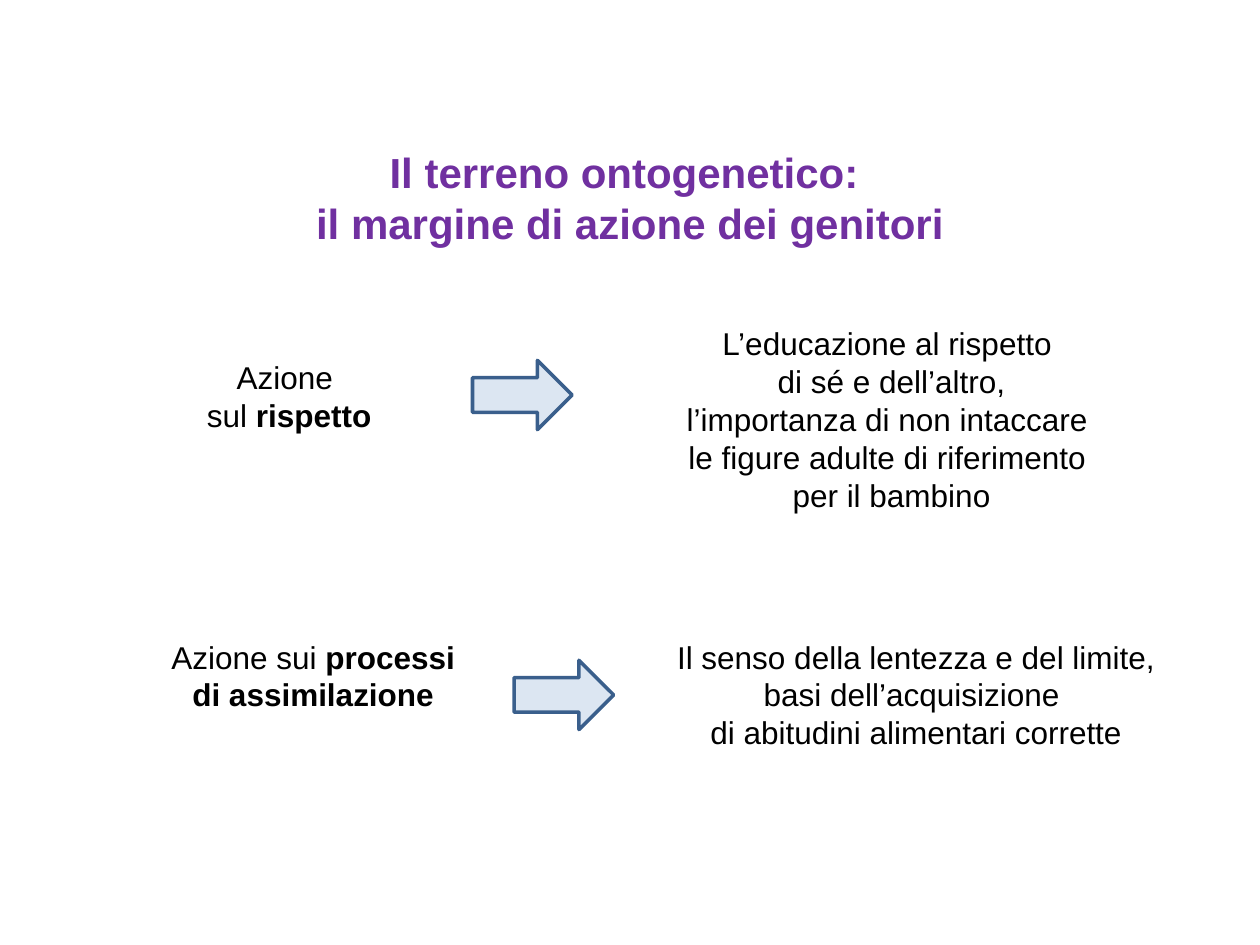
from pptx import Presentation
from pptx.dml.color import RGBColor as Color
from pptx.enum.shapes import MSO_SHAPE as Shape
from pptx.enum.text import MSO_ANCHOR as Anchor, PP_ALIGN as Align
from pptx.util import Inches, Pt

THEME = {
    "title": {"name": "Arial", "size": Pt(24), "color": "7030A0"},
    "body": {"name": "Arial", "size": Pt(18), "color": "000000"},
    "arrow_fill": "DCE6F2",
    "arrow_line": "3A5F8C",
    "arrow_line_width": Pt(2),
}
ARROW_SIZE = (0.79, 0.55)

# Each paragraph is a list of (text, bold) spans; "\n" is a line break.
TITLE = {
    "at": (0.75, 0.76, 8.5, 1.61),
    "paras": [[("Il terreno ontogenetico: ", True), ("\n", True),
               ("il margine di azione dei genitori", True)]],
}
ROWS = [
    {
        "action": {
            "at": (1.04, 2.73, 2.51, 0.82),
            "paras": [[("Azione ", False)],
                      [("sul ", False), ("rispetto", True)]],
        },
        "arrow": (3.75, 2.86),
        "outcome": {
            "at": (4.87, 2.49, 4.41, 1.67),
            "paras": [[("L’educazione al rispetto ", False)],
                      [("di sé e dell’altro,", False)],
                      [("l’importanza di non intaccare ", False)],
                      [("le figure adulte di riferimento ", False)],
                      [("per il bambino", False)]],
        },
    },
    {
        "action": {
            "at": (1.23, 4.95, 2.51, 0.82),
            "paras": [[("Azione sui ", False),
                       ("processi di assimilazione", True)]],
        },
        "arrow": (4.08, 5.24),
        "outcome": {
            "at": (5.16, 4.82, 4.22, 1.38),
            "paras": [[("Il senso della lentezza e del limite, "
                        "basi dell’acquisizione ", False)],
                      [("di abitudini alimentari corrette", False)]],
        },
    },
]


def add_text(page, content, style):
    box = page.shapes.add_textbox(*map(Inches, content["at"]))
    frame = box.text_frame
    frame.word_wrap = True
    frame.vertical_anchor = Anchor.MIDDLE
    for index, spans in enumerate(content["paras"]):
        para = frame.add_paragraph() if index else frame.paragraphs[0]
        para.alignment = Align.CENTER
        for text, bold in spans:
            if text == "\n":
                para.add_line_break()
                continue
            span = para.add_run()
            span.text = text
            span.font.color.rgb = Color.from_string(style["color"])
            formats = {"name": style["name"], "size": style["size"], "bold": bold}
            for name, value in formats.items():
                setattr(span.font, name, value)


def add_arrow(page, corner):
    arrow = page.shapes.add_shape(Shape.RIGHT_ARROW, *map(Inches, corner + ARROW_SIZE))
    arrow.shadow.inherit = False
    arrow.fill.solid()
    arrow.fill.fore_color.rgb = Color.from_string(THEME["arrow_fill"])
    arrow.line.color.rgb = Color.from_string(THEME["arrow_line"])
    arrow.line.width = THEME["arrow_line_width"]


def main():
    deck = Presentation()
    deck.slide_width, deck.slide_height = Inches(10), Inches(7.5)
    page = deck.slides.add_slide(deck.slide_layouts[6])
    add_text(page, TITLE, THEME["title"])
    for row in ROWS:
        add_text(page, row["action"], THEME["body"])
        add_text(page, row["outcome"], THEME["body"])
        add_arrow(page, row["arrow"])
    deck.save("out.pptx")


if __name__ == "__main__":
    main()
